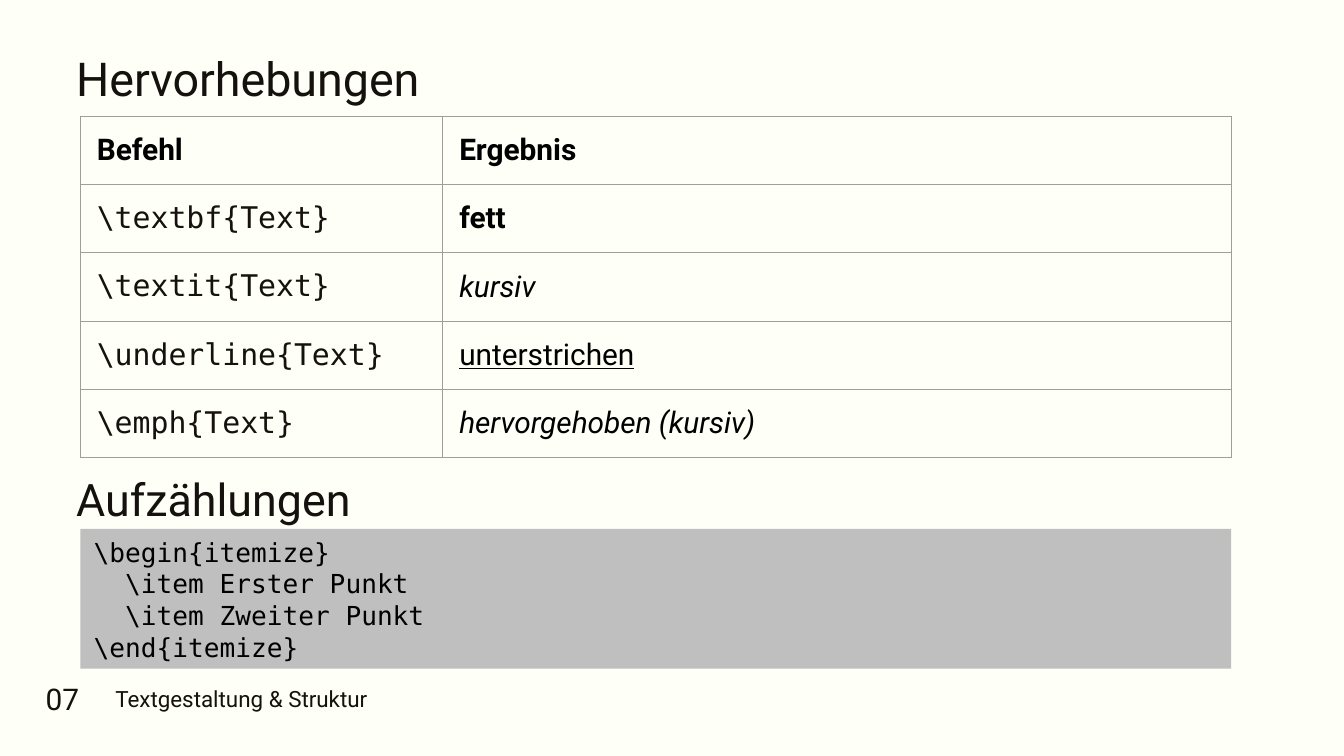
"""Build the slide on LaTeX emphasis commands and lists."""
from lxml import etree
from pptx import Presentation
from pptx.dml.color import RGBColor
from pptx.enum.shapes import MSO_SHAPE
from pptx.enum.text import MSO_ANCHOR, MSO_AUTO_SIZE, PP_ALIGN
from pptx.oxml.ns import qn
from pptx.util import Cm, Pt

RECTANGLE = MSO_SHAPE.RECTANGLE
TOP, MIDDLE = MSO_ANCHOR.TOP, MSO_ANCHOR.MIDDLE
NO_AUTOFIT = MSO_AUTO_SIZE.NONE
LEFT, CENTER = PP_ALIGN.LEFT, PP_ALIGN.CENTER

CREAM = RGBColor(0xFE, 0xFF, 0xF6)
INK = RGBColor(0x15, 0x11, 0x0E)
BLACK = RGBColor(0, 0, 0)
CODE_GRAY = RGBColor(0xBF, 0xBF, 0xBF)
BORDER_GRAY = RGBColor(0x9E, 0x9E, 0x9E)
SANS, MONO = "Roboto", "DejaVu Sans Mono"


def add_run(paragraph, text, size, font=SANS, color=INK):
    run = paragraph.add_run()
    run.text = text
    run.font.name = font
    run.font.size = Pt(size)
    run.font.color.rgb = color
    run.font.bold = False
    return run


def fill_label(label, text, size, align=LEFT):
    frame = label.text_frame
    frame.word_wrap = True
    frame.auto_size = NO_AUTOFIT
    frame.vertical_anchor = TOP
    frame.margin_left = frame.margin_right = Cm(0.25)
    frame.margin_top = frame.margin_bottom = Cm(0.25)
    paragraph = frame.paragraphs[0]
    paragraph.alignment = align
    add_run(paragraph, text, size)


prs = Presentation()
prs.slide_width, prs.slide_height = Cm(25.4), Cm(14.29)
slide = prs.slides.add_slide(prs.slide_layouts[5])
slide.background.fill.solid()
slide.background.fill.fore_color.rgb = CREAM

title = slide.shapes.title
title.left, title.top, title.width, title.height = Cm(1.19), Cm(0.69), Cm(10.72), Cm(2.64)
fill_label(title, "Hervorhebungen", 25)

for text, size, align, left, top, width, height in (
    ("07", 16, CENTER, 0.43, 12.62, 1.5, 1.19),
    ("Textgestaltung & Struktur", 12, LEFT, 1.93, 12.7, 7.24, 1.19),
    ("Aufzählungen", 24, LEFT, 1.19, 8.66, 10.72, 2.64),
):
    label = slide.shapes.add_textbox(Cm(left), Cm(top), Cm(width), Cm(height))
    fill_label(label, text, size, align)

COMMANDS = (
    ("Befehl", "Ergebnis", "bold"),
    (r"\textbf{Text}", "fett", "bold"),
    (r"\textit{Text}", "kursiv", "italic"),
    (r"\underline{Text}", "unterstrichen", "underline"),
    (r"\emph{Text}", "hervorgehoben (kursiv)", "italic"),
)
ROW_HEIGHT = Cm(1.29)
commands = slide.shapes.add_table(
    len(COMMANDS), 2, Cm(1.52), Cm(2.2), Cm(21.75), ROW_HEIGHT * len(COMMANDS)
).table
commands.first_row = commands.horz_banding = False
commands.columns[0].width, commands.columns[1].width = Cm(6.85), Cm(14.9)

for row, (command, result, emphasis) in enumerate(COMMANDS):
    commands.rows[row].height = ROW_HEIGHT
    for column, text in enumerate((command, result)):
        cell = commands.cell(row, column)
        cell.fill.background()
        cell.vertical_anchor = MIDDLE
        cell.margin_left = cell.margin_right = Cm(0.31)
        cell.margin_top = cell.margin_bottom = Cm(0.31)
        paragraph = cell.text_frame.paragraphs[0]
        if row > 0 and column == 0:
            paragraph.line_spacing = Pt(18)
            add_run(paragraph, text, 16, MONO)
        else:
            run = add_run(paragraph, text, 16, color=BLACK)
            setattr(run.font, emphasis, True)
        properties = cell._tc.get_or_add_tcPr()
        for position, side in enumerate(("lnL", "lnR", "lnT", "lnB")):
            border = etree.Element(qn(f"a:{side}"), w=str(Pt(0.75)))
            solid = etree.SubElement(border, qn("a:solidFill"))
            etree.SubElement(solid, qn("a:srgbClr"), val=str(BORDER_GRAY))
            properties.insert(position, border)

LIST_CODE = (
    r"\begin{itemize}",
    r"  \item Erster Punkt",
    r"  \item Zweiter Punkt",
    r"\end{itemize}",
)
code_block = slide.shapes.add_shape(RECTANGLE, Cm(1.52), Cm(10.0), Cm(21.75), Cm(2.64))
code_block.shadow.inherit = False
code_block.fill.solid()
code_block.fill.fore_color.rgb = CODE_GRAY
code_block.line.fill.background()
code_frame = code_block.text_frame
code_frame.word_wrap = True
code_frame.vertical_anchor = TOP
for number, line in enumerate(LIST_CODE):
    paragraph = code_frame.add_paragraph() if number else code_frame.paragraphs[0]
    paragraph.alignment = LEFT
    paragraph.line_spacing = Pt(17)
    add_run(paragraph, line, 14, MONO, BLACK)

prs.save("out.pptx")
